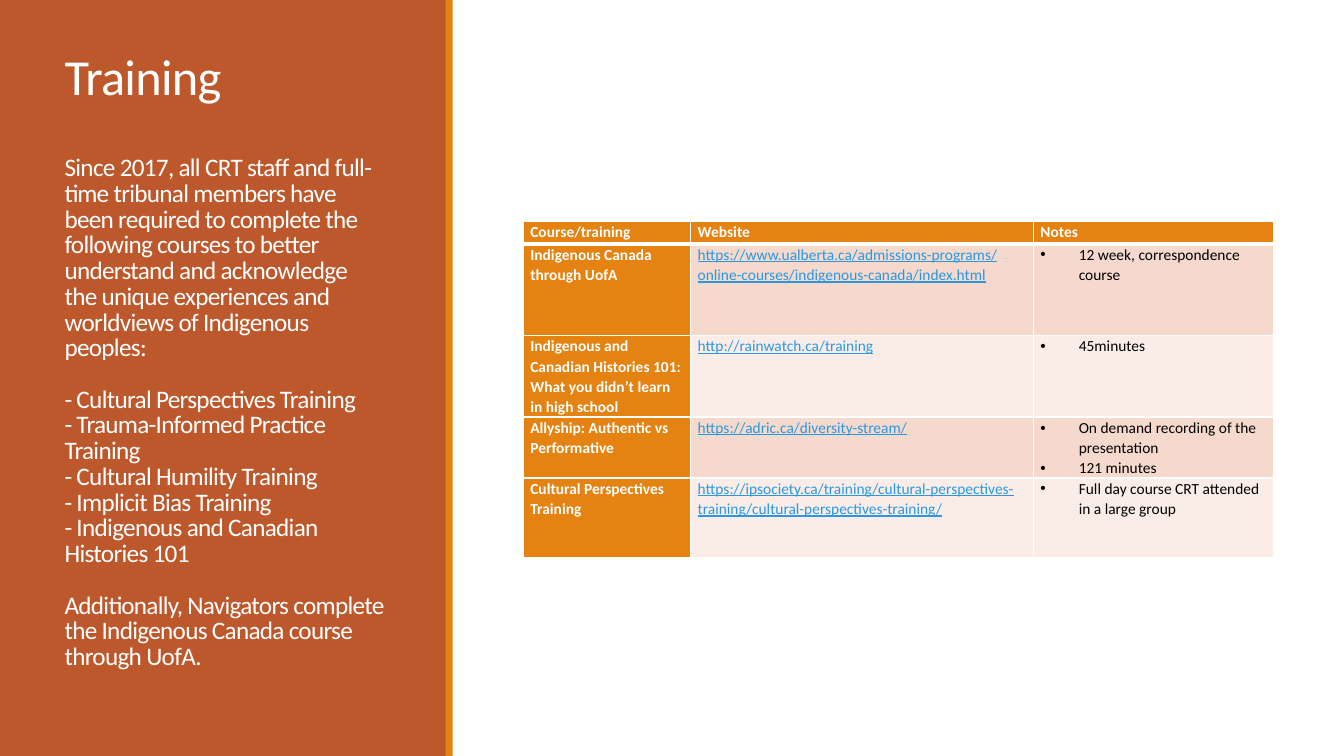
import pptx
import pptx.util
import pptx.dml.color
import pptx.enum.shapes
import pptx.enum.text
import pptx.oxml
import pptx.oxml.ns
from lxml import etree

Inches = pptx.util.Inches
Pt = pptx.util.Pt
qn = pptx.oxml.ns.qn

COLOURS = {
    "rust": "BD582C",
    "orange": "E48312",
    "white": "FFFFFF",
    "black": "000000",
    "link": "2998E3",
    "band_dark": "F5D9CC",
    "band_light": "FAEDE7",
}


def rgb(name):
    return pptx.dml.color.RGBColor.from_string(COLOURS[name])


def style_font(font, size, colour):
    font.name = "Calibri"
    font.size = Pt(size)
    font.color.rgb = rgb(colour)


deck = pptx.Presentation()
deck.slide_width = Inches(13.33)
deck.slide_height = Inches(7.5)
page = deck.slides.add_slide(deck.slide_layouts[5])

# Side panel and its accent stripe
for left, width, colour in [(0, 4.43, "rust"), (4.42, 0.07, "orange")]:
    panel = page.shapes.add_shape(
        pptx.enum.shapes.MSO_SHAPE.RECTANGLE,
        Inches(left), 0, Inches(width), Inches(7.5))
    panel.shadow.inherit = False
    panel.fill.solid()
    panel.fill.fore_color.rgb = rgb(colour)
    panel.line.fill.background()

# Title with introduction, moved in front of the panel
title = page.shapes.title
page.shapes._spTree.append(title._element)
title.left, title.top = Inches(0.54), Inches(0.26)
title.width, title.height = Inches(3.37), Inches(7.12)
frame = title.text_frame
frame.word_wrap = True
frame.auto_size = pptx.enum.text.MSO_AUTO_SIZE.NONE
frame.vertical_anchor = pptx.enum.text.MSO_ANCHOR.TOP
frame.margin_top = Inches(0.28)

# Text, size, space before
intro = [
    ("Training", 36, 0),
    ("Since 2017, all CRT staff and full-time tribunal members have been "
     "required to complete the following courses to better understand and "
     "acknowledge the unique experiences and worldviews of Indigenous peoples:",
     18, 36),
    ("- Cultural Perspectives Training", 18, 18.4),
    ("- Trauma-Informed Practice Training", 18, 0),
    ("- Cultural Humility Training", 18, 0),
    ("- Implicit Bias Training", 18, 0),
    ("- Indigenous and Canadian Histories 101", 18, 0),
    ("Additionally, Navigators complete the Indigenous Canada course "
     "through UofA.", 18, 18.4),
]
for index, (text, size, gap) in enumerate(intro):
    para = frame.paragraphs[0] if index == 0 else frame.add_paragraph()
    para.text = text
    para.alignment = pptx.enum.text.PP_ALIGN.LEFT
    para.line_spacing = 0.85
    para.space_before = Pt(gap)
    style_font(para.font, size, "white")
    para._p.pPr.find(qn("a:defRPr")).set("spc", "-50")

# Course table
rows = [
    ("Course/training", "Website", ["Notes"]),
    ("Indigenous Canada through UofA",
     "https://www.ualberta.ca/admissions-programs/online-courses/indigenous-canada/index.html",
     ["12 week, correspondence course"]),
    ("Indigenous and Canadian Histories 101: What you didn’t learn in high school",
     "http://rainwatch.ca/training",
     ["45minutes"]),
    ("Allyship: Authentic vs Performative",
     "https://adric.ca/diversity-stream/",
     ["On demand recording of the presentation", "121 minutes"]),
    ("Cultural Perspectives Training",
     "https://ipsociety.ca/training/cultural-perspectives-training/cultural-perspectives-training/",
     ["Full day course CRT attended in a large group"]),
]
table = page.shapes.add_table(
    len(rows), 3, Inches(5.19), Inches(2.2), Inches(7.44), Inches(3.31)).table
for column, width in zip(table.columns, [1.66, 3.4, 2.38]):
    column.width = Inches(width)
for row, height in zip(table.rows, [0.22, 0.91, 0.79, 0.6, 0.79]):
    row.height = Inches(height)

for row_index, (course, website, notes) in enumerate(rows):
    for column_index, lines in enumerate([[course], [website], notes]):
        cell = table.cell(row_index, column_index)
        heading = row_index == 0 or column_index == 0
        cell.margin_left = cell.margin_right = Inches(0.07)
        cell.margin_top = cell.margin_bottom = 0
        band = "band_dark" if row_index % 2 else "band_light"
        cell.fill.solid()
        cell.fill.fore_color.rgb = rgb("orange" if heading else band)

        # White borders, thicker under the header row
        thick_side = {0: "lnB", 1: "lnT"}.get(row_index)
        for position, side in enumerate(["lnL", "lnR", "lnT", "lnB"]):
            points = 3 if side == thick_side else 1
            border = etree.Element(qn("a:" + side), w=str(Pt(points)))
            fill = etree.SubElement(border, qn("a:solidFill"))
            etree.SubElement(fill, qn("a:srgbClr"), val=COLOURS["white"])
            cell._tc.tcPr.insert(position, border)

        for index, text in enumerate(lines):
            box = cell.text_frame
            para = box.paragraphs[0] if index == 0 else box.add_paragraph()
            para.text = text
            para.line_spacing = 1.07
            if column_index == 2 and not heading:
                properties = para._p.get_or_add_pPr()
                properties.set("marL", str(Inches(0.38)))
                properties.set("indent", str(-Inches(0.38)))
                etree.SubElement(properties, qn("a:buFont"), typeface="Arial")
                etree.SubElement(properties, qn("a:buChar"), char="•")
            is_link = column_index == 1 and not heading
            colour = "white" if heading else "link" if is_link else "black"
            style_font(para.font, 11, colour)
            para.font.bold = heading
            para.font.underline = is_link

deck.save("out.pptx")
